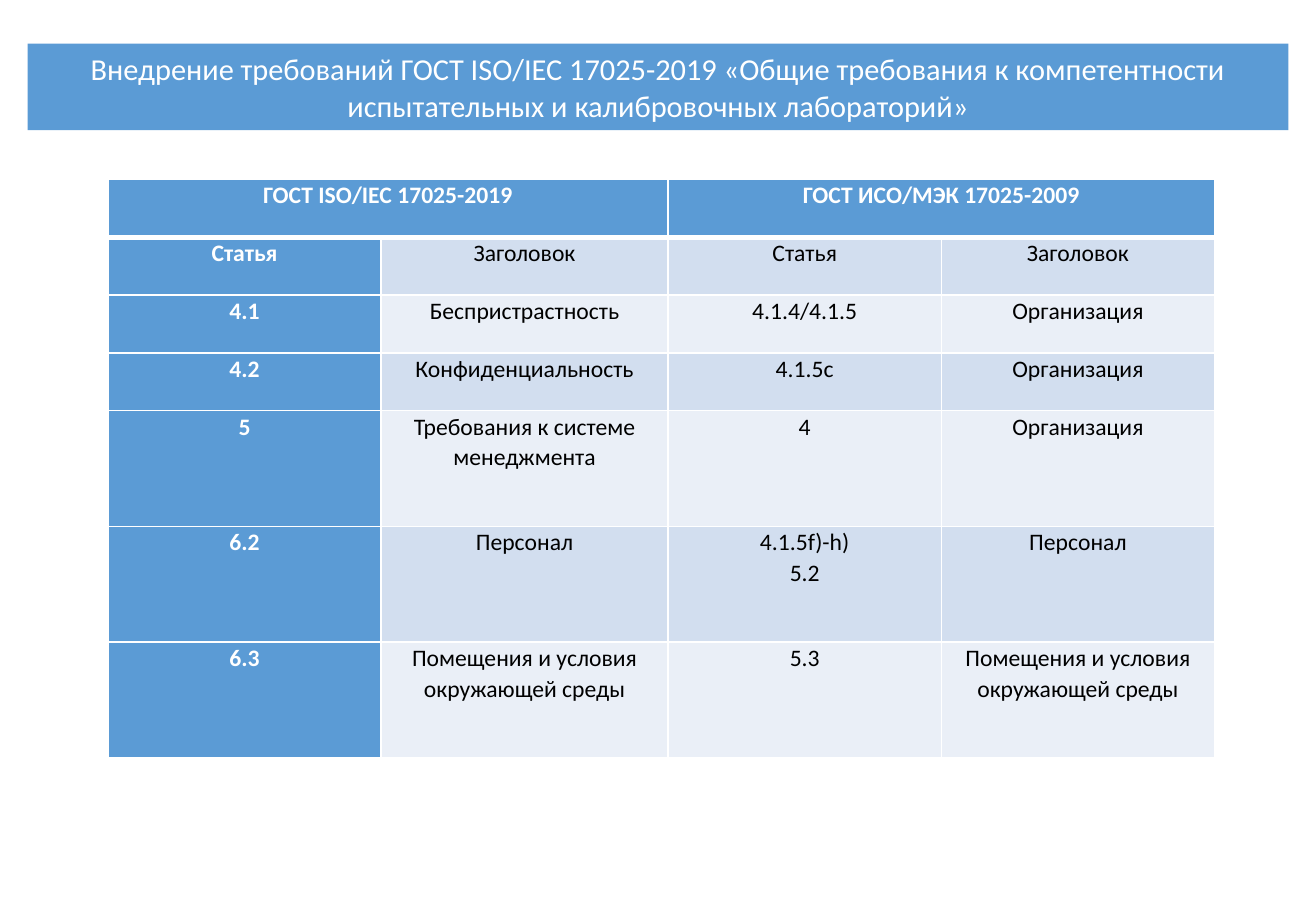
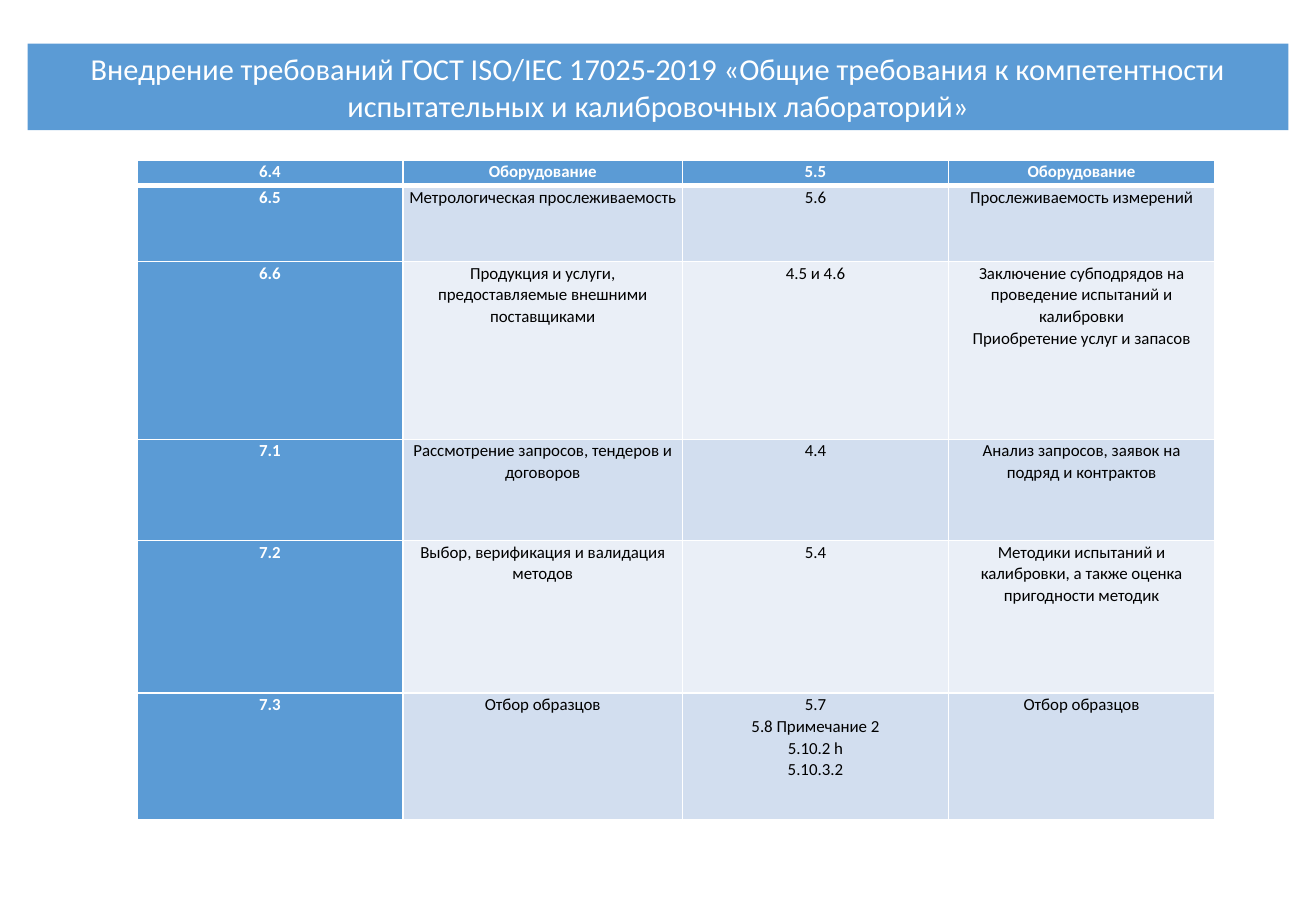
from lxml import etree
from pptx import Presentation
from pptx import util as u
from pptx.dml.color import RGBColor
from pptx.enum import shapes, text
from pptx.oxml.ns import qn

COLORS = {"blue": "5B9BD5", "odd": "D2DEEF", "even": "EAEFF7",
          "white": "FFFFFF", "black": "000000"}
TITLE = ("Внедрение требований ГОСТ ISO/IEC 17025-2019 «Общие требования "
         "к компетентности испытательных и калибровочных лабораторий»")
COLUMN_WEIGHTS = [1, 1.05, 1, 1]

# None continues the cell on its left; a line break starts a new paragraph
CLAUSES_4_TO_6 = [
    ["ГОСТ ISO/IEC 17025-2019", None, "ГОСТ ИСО/МЭК 17025-2009", None],
    ["Статья", "Заголовок", "Статья", "Заголовок"],
    ["4.1", "Беспристрастность", "4.1.4/4.1.5", "Организация"],
    ["4.2", "Конфиденциальность", "4.1.5с", "Организация"],
    ["5", "Требования к системе менеджмента", "4", "Организация"],
    ["6.2", "Персонал", "4.1.5f)-h)\n5.2", "Персонал"],
    ["6.3", "Помещения и условия окружающей среды", "5.3",
     "Помещения и условия окружающей среды"],
]
CLAUSES_6_TO_7 = [
    ["6.4", "Оборудование", "5.5", "Оборудование"],
    ["6.5", "Метрологическая прослеживаемость", "5.6",
     "Прослеживаемость измерений"],
    ["6.6", "Продукция и услуги, предоставляемые внешними поставщиками",
     "4.5 и 4.6",
     "Заключение субподрядов на проведение испытаний и калибровки\n"
     "Приобретение услуг и запасов"],
    ["7.1", "Рассмотрение запросов, тендеров и договоров", "4.4",
     "Анализ запросов, заявок на подряд и контрактов"],
    ["7.2", "Выбор, верификация и валидация методов", "5.4",
     "Методики испытаний и калибровки, а также оценка пригодности методик"],
    ["7.3", "Отбор образцов", "5.7\n5.8 Примечание 2\n5.10.2 h\n5.10.3.2",
     "Отбор образцов"],
]


def rgb(name):
    return RGBColor.from_string(COLORS[name])


class Deck:
    """Shared style and the current slide, on a grid of 100 columns by 100 rows."""

    font = "Calibri"

    def __init__(self, width, height):
        self.prs = Presentation()
        self.prs.slide_width = u.Inches(width)
        self.prs.slide_height = u.Inches(height)
        self.s = None

    def box(self, x, y, w, h):
        col, row = self.prs.slide_width / 100, self.prs.slide_height / 100
        return [round(n) for n in (x * col, y * row, w * col, h * row)]

    def style(self, tf, size, color, bold=False, spacing=None):
        for p in tf.paragraphs:
            p.alignment = text.PP_ALIGN.CENTER
            p.line_spacing = spacing
            p.font.name, p.font.size, p.font.bold = self.font, u.Pt(size), bold
            p.font.color.rgb = rgb(color)

    def slide(self, title):
        self.s = self.prs.slides.add_slide(self.prs.slide_layouts[6])
        self.band(title)

    def band(self, title):
        sp = self.s.shapes.add_shape(shapes.MSO_SHAPE.RECTANGLE,
                                     *self.box(2.1, 4.8, 95.8, 9.5))
        sp.shadow.inherit = False
        sp.fill.solid()
        sp.fill.fore_color.rgb = rgb("blue")
        sp.line.fill.background()
        tf = sp.text_frame
        tf.word_wrap = True
        tf.auto_size = text.MSO_AUTO_SIZE.SHAPE_TO_FIT_TEXT
        tf.text = title
        self.style(tf, 18, "white")

    def borders(self, cell, row):
        # A thick line parts the header from the body
        top, bottom = (3 if row == 1 else 1), (3 if row == 0 else 1)
        tc_pr = cell._tc.get_or_add_tcPr()
        for side, width in zip("LRTB", (1, 1, top, bottom)):
            ln = etree.SubElement(tc_pr, qn("a:ln" + side), w=str(u.Pt(width)))
            fill = etree.SubElement(ln, qn("a:solidFill"))
            etree.SubElement(fill, qn("a:srgbClr"), val=COLORS["white"])

    def table(self, rows, row_weights, at, size, inset):
        box = self.box(*at)
        tbl = self.s.shapes.add_table(len(rows), len(COLUMN_WEIGHTS), *box).table
        for column, weight in zip(tbl.columns, COLUMN_WEIGHTS):
            column.width = round(box[2] * weight / sum(COLUMN_WEIGHTS))
        for i, (row, weight) in enumerate(zip(rows, row_weights)):
            tbl.rows[i].height = round(box[3] * weight / sum(row_weights))
            for j, words in enumerate(row):
                self.cell(tbl.cell(i, j), i, j, words, size, inset)
                if words is None:
                    tbl.cell(i, j - 1).merge(tbl.cell(i, j))

    def cell(self, cell, i, j, words, size, inset):
        heading = i == 0 or j == 0
        self.borders(cell, i)
        cell.fill.solid()
        cell.fill.fore_color.rgb = rgb("blue" if heading else "odd" if i % 2 else "even")
        cell.margin_left = cell.margin_right = u.Inches(inset)
        cell.margin_top = cell.margin_bottom = 0
        if words:
            cell.text_frame.text = words
        self.style(cell.text_frame, size, "white" if heading else "black", heading, 1.07)


def main():
    deck = Deck(10.83, 7.5)

    # Clauses 4 to 6.3
    deck.slide(TITLE)
    deck.table(CLAUSES_4_TO_6, [1, 1, 1, 1, 2, 2, 2],
               (8.2, 19.7, 84.1, 63.5), size=14, inset=0.07)

    # Clauses 6.4 to 7.3
    deck.slide(TITLE)
    deck.table(CLAUSES_6_TO_7, [1, 3, 7, 4, 6, 5],
               (10.4, 17.6, 81.9, 72.4), size=10, inset=0.05)

    deck.prs.save("out.pptx")


if __name__ == "__main__":
    main()
